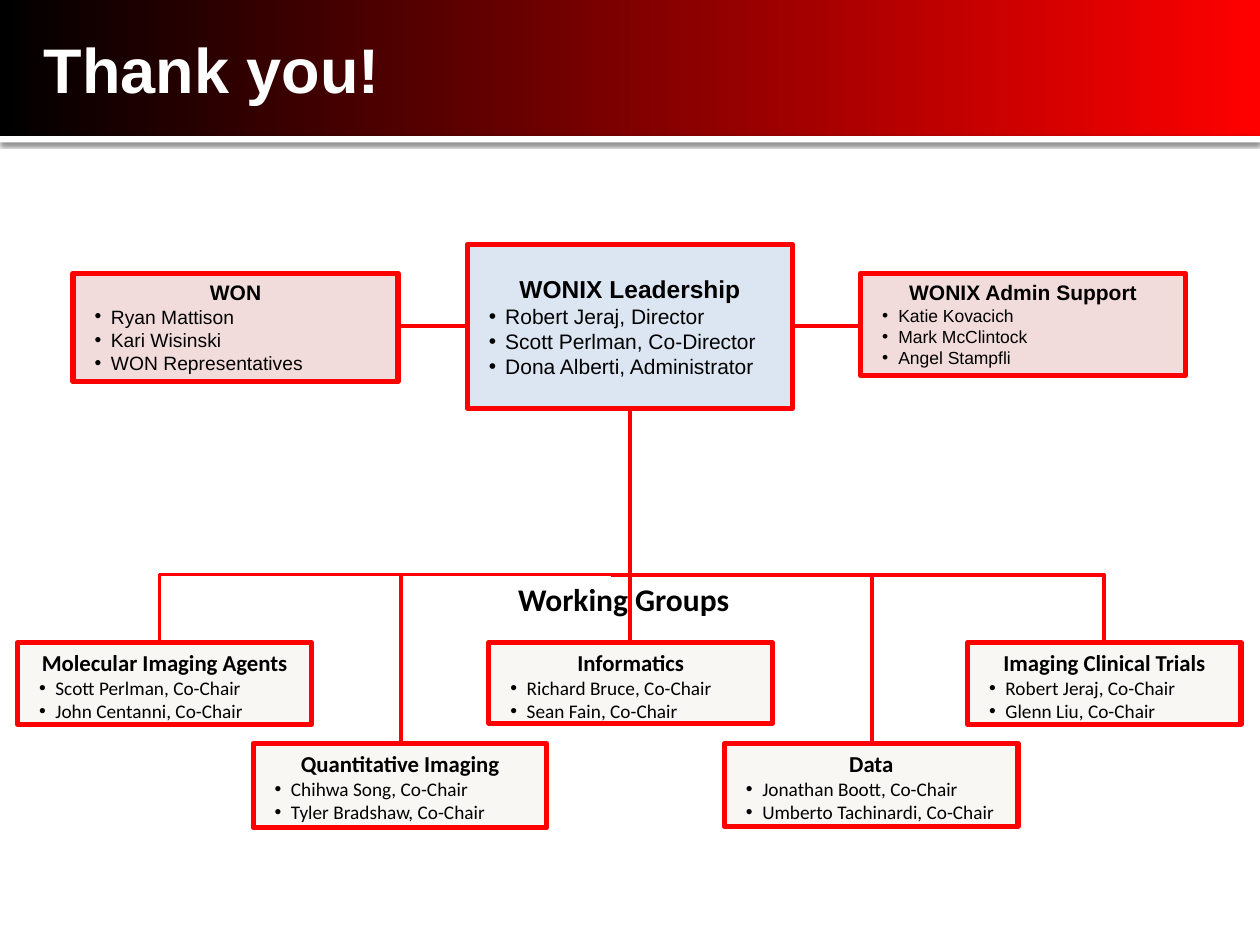
from lxml.etree import SubElement
from pptx import Presentation
from pptx.dml.color import RGBColor
from pptx.enum.shapes import MSO_CONNECTOR, MSO_SHAPE
from pptx.enum.text import MSO_ANCHOR, PP_ALIGN
from pptx.oxml.ns import qn
from pptx.util import Inches, Pt

BLACK = RGBColor(0x00, 0x00, 0x00)
WHITE = RGBColor(0xFF, 0xFF, 0xFF)
RED = RGBColor(0xFF, 0x00, 0x00)
BLUE_TINT = RGBColor(0xDC, 0xE6, 0xF2)
PINK_TINT = RGBColor(0xF2, 0xDC, 0xDB)
CREAM = RGBColor(0xF8, 0xF7, 0xF3)

BUS_TOP = 4.56
CENTER = 5
SIDE_LINE = 2.59

# Working groups: box, title, members
WORKING_GROUPS = [
    ((0.14, 5.1, 2.33, 0.65), "Molecular Imaging Agents",
     ["Scott Perlman, Co-Chair", "John Centanni, Co-Chair"]),
    ((2.01, 5.9, 2.33, 0.67), "Quantitative Imaging",
     ["Chihwa Song, Co-Chair", "Tyler Bradshaw, Co-Chair"]),
    ((3.88, 5.1, 2.25, 0.64), "Informatics",
     ["Richard Bruce, Co-Chair", "Sean Fain, Co-Chair"]),
    ((5.75, 5.9, 2.33, 0.66), "Data",
     ["Jonathan Boott, Co-Chair", "Umberto Tachinardi, Co-Chair"]),
    ((7.68, 5.1, 2.17, 0.65), "Imaging Clinical Trials",
     ["Robert Jeraj, Co-Chair", "Glenn Liu, Co-Chair"]),
]

# Leadership row: box, title, members, fill, title size, member size
LEADERSHIP = [
    ((0.58, 2.17, 2.58, 0.86), "WON",
     ["Ryan Mattison", "Kari Wisinski", "WON Representatives"],
     PINK_TINT, 12, 11),
    ((3.71, 1.94, 2.58, 1.3), "WONIX Leadership",
     ["Robert Jeraj, Director", "Scott Perlman, Co-Director",
      "Dona Alberti, Administrator"],
     BLUE_TINT, 14, 12),
    ((6.83, 2.17, 2.58, 0.81), "WONIX Admin Support",
     ["Katie Kovacich", "Mark McClintock", "Angel Stampfli"],
     PINK_TINT, 12, 10),
]


def style_font(para, name, size, color, bold):
    font = para.font
    font.name, font.size, font.bold = name, Pt(size), bold
    font.color.rgb = color


def add_rectangle(page, box):
    shape = page.shapes.add_shape(MSO_SHAPE.RECTANGLE, *map(Inches, box))
    shape.shadow.inherit = False
    shape.line.fill.background()
    return shape


def add_label(page, box, text, font_name, size, color, align):
    label = page.shapes.add_textbox(*map(Inches, box))
    frame = label.text_frame
    frame.word_wrap = True
    frame.vertical_anchor = MSO_ANCHOR.MIDDLE
    frame.text = text
    para = frame.paragraphs[0]
    para.alignment = align
    style_font(para, font_name, size, color, True)


def add_bullet(para):
    properties = para._p.get_or_add_pPr()
    properties.set("marL", str(Inches(0.25)))
    properties.set("indent", str(Inches(-0.13)))
    SubElement(properties, qn("a:buFont"), typeface="Arial")
    SubElement(properties, qn("a:buChar"), char="•")


def add_team(page, box, title, members, fill, font_name, title_size,
             member_size, anchor=MSO_ANCHOR.TOP):
    """Bordered box with a centred title and bulleted members."""
    shape = add_rectangle(page, box)
    shape.fill.solid()
    shape.fill.fore_color.rgb = fill
    shape.line.color.rgb = RED
    shape.line.width = Pt(3)
    frame = shape.text_frame
    frame.word_wrap = True
    frame.vertical_anchor = anchor
    frame.margin_left = frame.margin_right = Inches(0.05)
    frame.margin_top = frame.margin_bottom = Inches(0.05)
    frame.text = title
    heading = frame.paragraphs[0]
    heading.alignment = PP_ALIGN.CENTER
    style_font(heading, font_name, title_size, BLACK, True)
    for member in members:
        para = frame.add_paragraph()
        para.text = member
        para.alignment = PP_ALIGN.LEFT
        add_bullet(para)
        style_font(para, font_name, member_size, BLACK, False)


def add_line(page, start, end, bend=None):
    """Straight line, or an elbow that turns at the given share of its width."""
    kind = MSO_CONNECTOR.STRAIGHT if bend is None else MSO_CONNECTOR.ELBOW
    line = page.shapes.add_connector(kind, *map(Inches, start + end))
    line.line.color.rgb = RED
    line.line.width = Pt(2.25)
    properties = line._element.spPr
    SubElement(properties, qn("a:effectLst"))
    if bend is not None:
        guides = properties.find(qn("a:prstGeom")).get_or_add_avLst()
        SubElement(guides, qn("a:gd"), name="adj1",
                   fmla=f"val {round(bend * 100000)}")


def add_header(page, left, top, width, height):
    # Gradient band
    band = add_rectangle(page, (left, top, width, height))
    band.fill.gradient()
    band.fill.gradient_angle = 0
    for stop, color in zip(band.fill.gradient_stops, (BLACK, RED)):
        stop.color.rgb = color

    # White rule with a soft shadow below
    rule = add_rectangle(page, (left, top + height - 0.02, width, 0.05))
    rule.fill.solid()
    rule.fill.fore_color.rgb = WHITE
    effects = rule._element.spPr.find(qn("a:effectLst"))
    shadow = SubElement(effects, qn("a:outerShdw"), blurRad=str(Pt(2.5)),
                        dist=str(Pt(0.8)), dir="5400000", rotWithShape="0")
    shade = SubElement(shadow, qn("a:srgbClr"), val=str(BLACK))
    SubElement(shade, qn("a:alpha"), val="60000")

    add_label(page, (left + 0.25, top, 8.92, height - 0.02), "Thank you!",
              "Arial", 36, WHITE, PP_ALIGN.LEFT)


def add_working_groups(page):
    # Elbows to the outer groups, straight drops to the inner ones
    add_line(page, (4.85, BUS_TOP), (8.84, 5.25), 0.98)
    add_line(page, (5.02, BUS_TOP), (1.11, 5.33), 0.96)
    for x, bottom in ((3.18, 5.9), (CENTER, 5.42), (6.92, 6)):
        add_line(page, (x, BUS_TOP), (x, bottom))
    add_label(page, (3.71, 4.55, 2.48, 0.4), "Working Groups",
              "Calibri", 18, BLACK, PP_ALIGN.CENTER)
    for box, title, members in WORKING_GROUPS:
        add_team(page, box, title, members, CREAM, "Calibri", 13, 11)


def add_leadership(page):
    # Trunk down to the working groups and links to both sides
    add_line(page, (CENTER, 3.05), (CENTER, BUS_TOP))
    for x in (3.17, 6.29):
        add_line(page, (x, SIDE_LINE), (x + 0.54, SIDE_LINE))
    for box, title, members, fill, title_size, member_size in LEADERSHIP:
        anchor = MSO_ANCHOR.MIDDLE if fill == BLUE_TINT else MSO_ANCHOR.TOP
        add_team(page, box, title, members, fill, "Arial", title_size,
                 member_size, anchor)


def main():
    deck = Presentation()
    deck.slide_width, deck.slide_height = Inches(10), Inches(7.5)
    page = deck.slides.add_slide(deck.slide_layouts[6])
    add_header(page, 0, 0, 10, 1.1)
    add_working_groups(page)
    add_leadership(page)
    deck.save("out.pptx")


if __name__ == "__main__":
    main()
